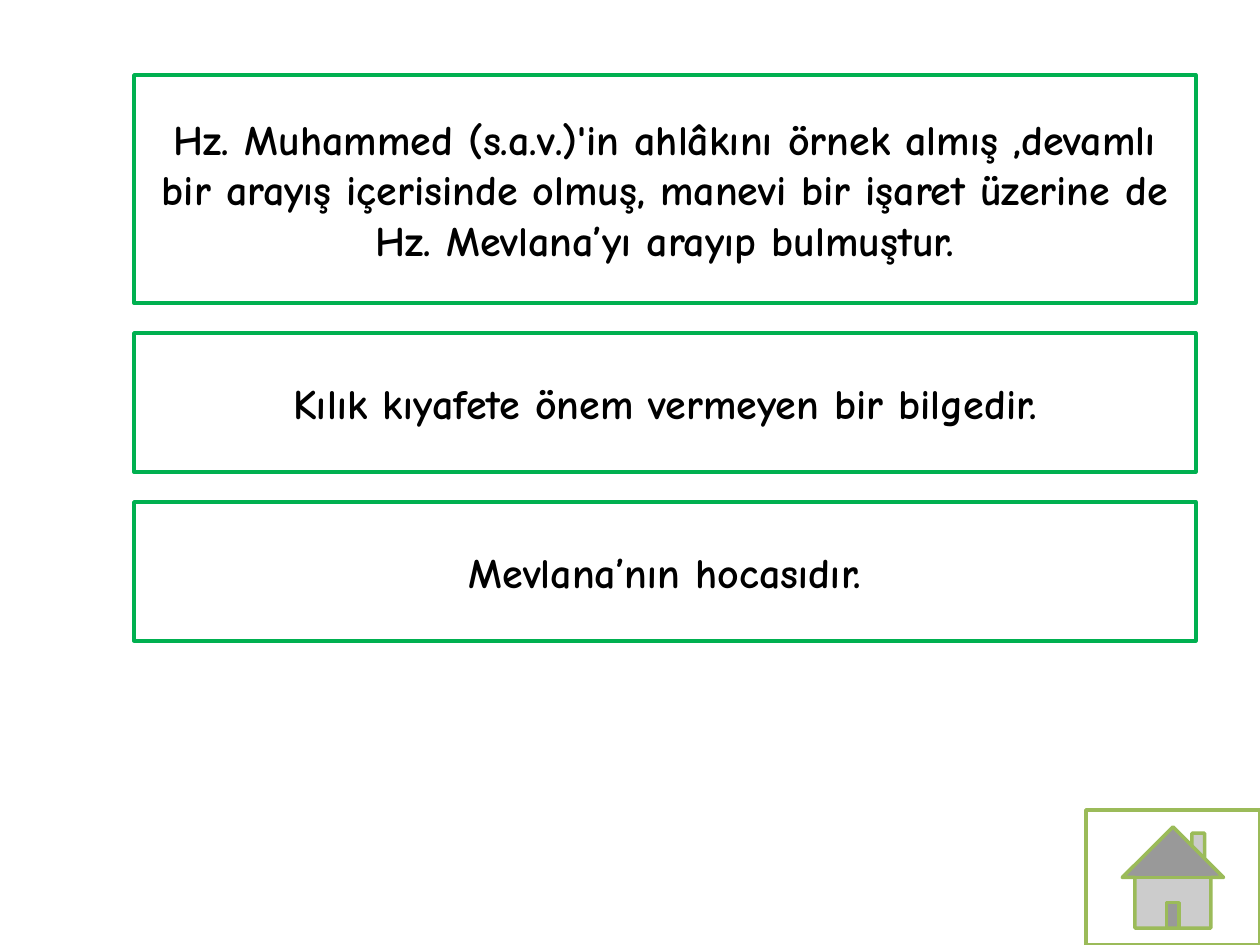
from pptx import Presentation
from pptx.dml.color import RGBColor
from pptx.enum.shapes import MSO_SHAPE
from pptx.enum.text import MSO_ANCHOR, PP_ALIGN
from pptx.util import Emu, Pt

PX = 914400 // 126
FONT = "Comic Neue"
WHITE, BLACK, GREEN, OLIVE = "FFFFFF", "000000", "00B050", "9BBB59"


def rgb(value):
    return RGBColor.from_string(value)


class Slide:
    """Holds the text style and the current slide; lengths are px."""

    def __init__(self, prs):
        self.s = prs.slides.add_slide(prs.slide_layouts[6])
        self.size = Pt(24)

    def shape(self, kind, x, y, w, h, line):
        sp = self.s.shapes.add_shape(kind, *(Emu(v * PX) for v in (x, y, w, h)))
        sp.shadow.inherit = False
        sp.fill.solid()
        sp.fill.fore_color.rgb = rgb(WHITE)
        sp.line.color.rgb = rgb(line)
        sp.line.width = Pt(2)
        return sp

    def text_card(self, x, y, w, h, text):
        sp = self.shape(MSO_SHAPE.RECTANGLE, x, y, w, h, GREEN)
        tf = sp.text_frame
        tf.word_wrap = True
        tf.vertical_anchor = MSO_ANCHOR.MIDDLE
        tf.text = text
        p = tf.paragraphs[0]
        p.alignment = PP_ALIGN.CENTER
        font = p.runs[0].font
        font.name, font.size, font.bold = FONT, self.size, True
        font.color.rgb = rgb(BLACK)

    def home_button(self, x, y, w, h):
        self.shape(MSO_SHAPE.ACTION_BUTTON_HOME, x, y, w, h, OLIVE)


def main():
    prs = Presentation()
    prs.slide_width, prs.slide_height = Emu(1260 * PX), Emu(945 * PX)
    slide = Slide(prs)

    cards = [
        (228, "Hz. Muhammed (s.a.v.)'in ahlâkını örnek almış ,devamlı bir arayış "
              "içerisinde olmuş, manevi bir işaret üzerine de Hz. Mevlana’yı "
              "arayıp bulmuştur."),
        (139, "Kılık kıyafete önem vermeyen bir bilgedir."),
        (139, "Mevlana’nın hocasıdır."),
    ]
    top, gap = 75, 30
    for height, text in cards:
        slide.text_card(134, top, 1062, height, text)
        top += height + gap

    slide.home_button(1086, 810, 174, 135)
    prs.save("out.pptx")


if __name__ == "__main__":
    main()
